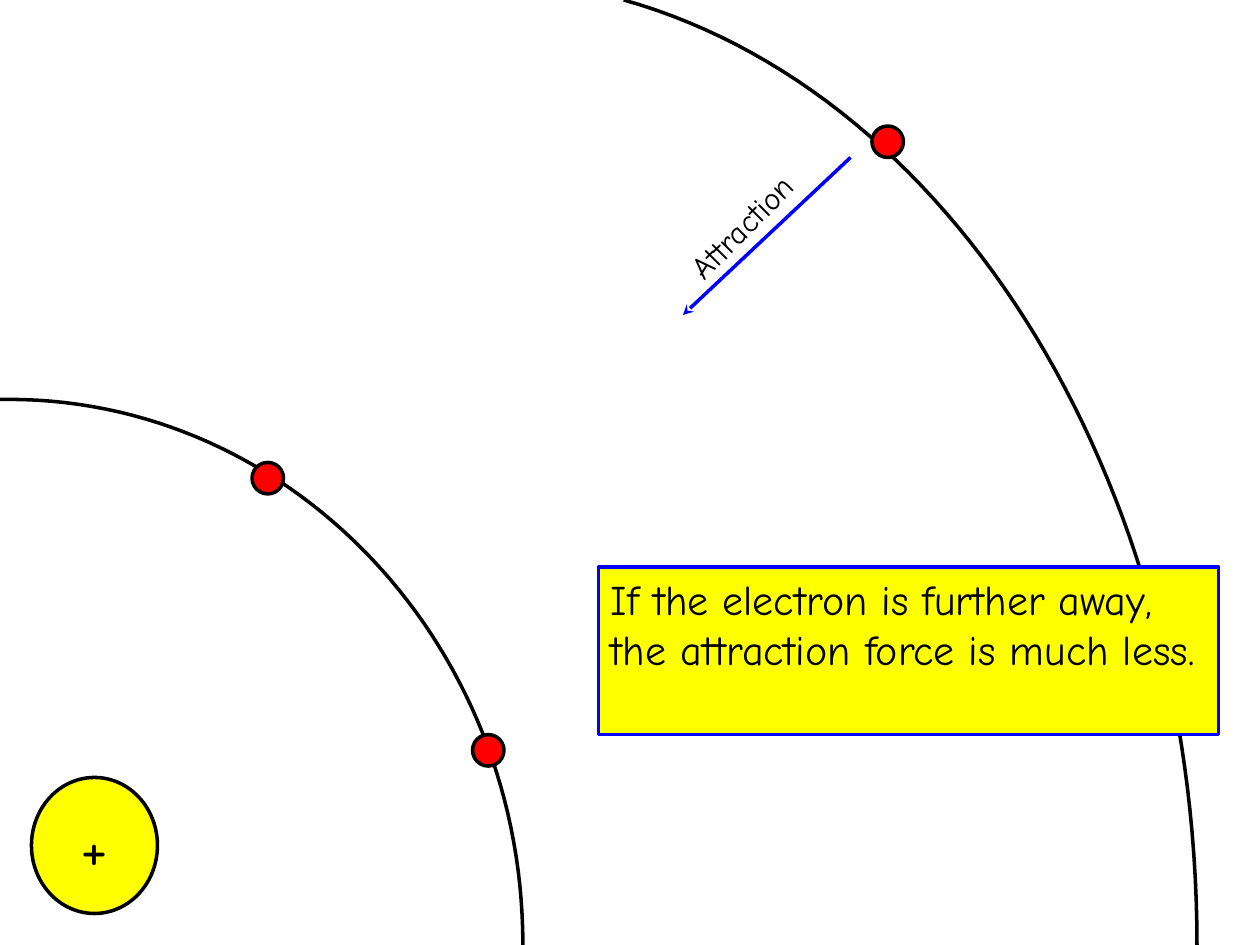
"""Build a slide on how distance weakens the attraction on an electron."""
import dataclasses

import lxml.etree
import pptx
import pptx.dml.color
import pptx.enum.shapes
import pptx.enum.text
import pptx.oxml.ns
import pptx.util

KIND = pptx.enum.shapes.MSO_SHAPE
ALIGN = pptx.enum.text.PP_ALIGN
ANCHOR = pptx.enum.text.MSO_ANCHOR


@dataclasses.dataclass(frozen=True)
class Theme:
    font: str = "Comic Neue"
    ink: str = "000000"
    blue: str = "0000FF"
    red: str = "FF0000"
    yellow: str = "FFFF00"
    small: int = 18
    body: int = 24
    sign: int = 36
    stroke: int = 2


def emu(px):
    return round(px * 9144)


def color(code):
    return pptx.dml.color.RGBColor.from_string(code)


def bezier(start, pull, push, end, steps=60):
    points = []
    for step in range(steps + 1):
        t = step / steps
        u = 1 - t
        parts = (u**3, 3 * u * u * t, 3 * u * t * t, t**3)
        points.append(tuple(
            sum(part * value for part, value in zip(parts, axis))
            for axis in zip(start, pull, push, end)
        ))
    return points


class Board:
    def __init__(self, slide, theme):
        self.slide = slide
        self.theme = theme

    def edge(self, item, code):
        item.line.color.rgb = color(code)
        item.line.width = pptx.util.Pt(self.theme.stroke)

    def shape(self, kind, box, fill, edge):
        item = self.slide.shapes.add_shape(kind, *map(emu, box))
        item.shadow.inherit = False
        item.fill.solid()
        item.fill.fore_color.rgb = color(fill)
        self.edge(item, edge)
        return item

    def words(self, item, text, size, align=ALIGN.LEFT, anchor=ANCHOR.TOP, wrap=True):
        frame = item.text_frame
        frame.text = text
        frame.word_wrap = wrap
        frame.vertical_anchor = anchor
        par = frame.paragraphs[0]
        par.alignment = align
        par.font.name = self.theme.font
        par.font.size = pptx.util.Pt(size)
        par.font.color.rgb = color(self.theme.ink)

    def label(self, text, box, size, turn):
        item = self.slide.shapes.add_textbox(*map(emu, box))
        item.rotation = turn
        self.words(item, text, size)

    def orbit(self, points):
        spots = [(emu(x), emu(y)) for x, y in points]
        curve = self.slide.shapes.build_freeform(*spots[0])
        curve.add_line_segments(spots[1:], close=False)
        item = curve.convert_to_shape()
        item.shadow.inherit = False
        item.fill.background()
        self.edge(item, self.theme.ink)

    def arrow(self, start, end, code):
        item = self.slide.shapes.add_connector(
            pptx.enum.shapes.MSO_CONNECTOR.STRAIGHT, *map(emu, start + end))
        self.edge(item, code)
        qn = pptx.oxml.ns.qn
        props = item._element.spPr
        lxml.etree.SubElement(props.find(qn("a:ln")), qn("a:tailEnd"), type="stealth")
        lxml.etree.SubElement(props, qn("a:effectLst"))


def main():
    deck = pptx.Presentation()
    deck.slide_width, deck.slide_height = emu(1000), emu(750)
    theme = Theme()
    board = Board(deck.slides.add_slide(deck.slide_layouts[6]), theme)

    core = board.shape(KIND.OVAL, (25, 617, 100, 108), theme.yellow, theme.ink)
    board.words(core, "+", theme.sign, ALIGN.CENTER, ANCHOR.MIDDLE, False)

    board.orbit([(0, 317)] + bezier((7, 317), (232, 317), (415, 511), (415, 750)))
    board.orbit(bezier((495, 0), (761, 75), (950, 388), (950, 750)))
    for left, top in ((200, 367), (375, 583), (692, 100)):
        board.shape(KIND.OVAL, (left, top, 25, 25), theme.red, theme.ink)

    board.arrow((675, 125), (542, 250), theme.blue)
    board.label("Attraction", (521, 145, 164, 40), theme.small, 314.5)
    note = board.shape(KIND.RECTANGLE, (475, 450, 492, 133), theme.yellow, theme.blue)
    board.words(
        note,
        "If the electron is further away, the attraction force is much less.",
        theme.body,
    )
    deck.save("out.pptx")


if __name__ == "__main__":
    main()
